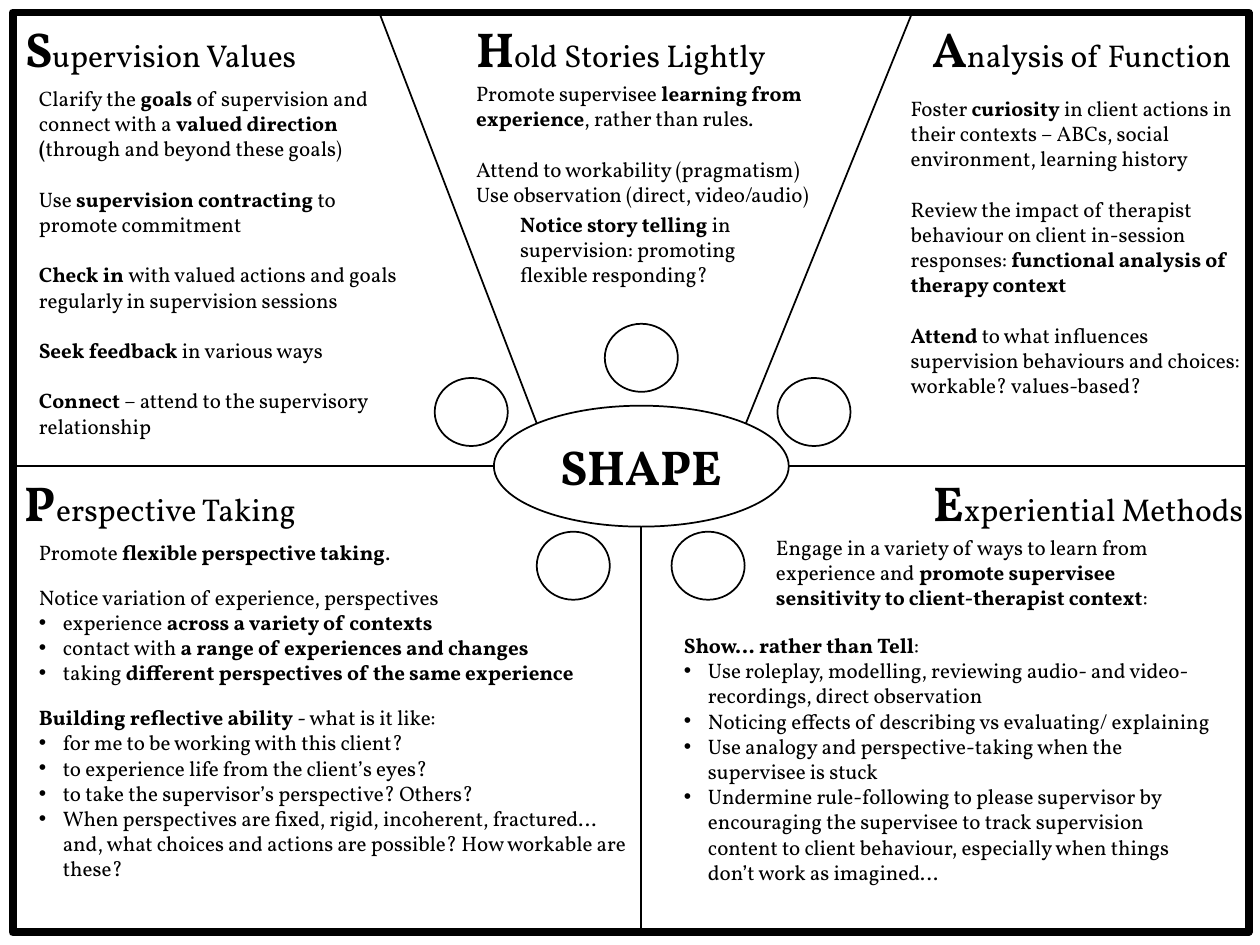
from lxml import etree
from pptx import Presentation
from pptx import util as u
from pptx.dml.color import RGBColor
from pptx.enum import shapes, text
from pptx.oxml import ns

BLACK = RGBColor(0, 0, 0)
WHITE = RGBColor(255, 255, 255)
FONT = "Vollkorn"
BODY, HEADING, INITIAL = 12, 18, 28
BLANK_LINE = 14.4  # height in points of one body line
INDENT = u.Inches(0.19)


class Board:
    """Style and current slide; bold words are marked *like this*."""

    def __init__(self, slide):
        self.slide = slide

    def outline(self, kind, left, top, width, height, line=1):
        shape = self.slide.shapes.add_shape(
            kind, *(u.Inches(value) for value in (left, top, width, height)))
        shape.shadow.inherit = False
        shape.fill.solid()
        shape.fill.fore_color.rgb = WHITE
        shape.line.color.rgb = BLACK
        shape.line.width = u.Pt(line)
        return shape

    def line(self, *ends):
        connector = self.slide.shapes.add_connector(
            shapes.MSO_CONNECTOR.STRAIGHT, *(u.Inches(end) for end in ends))
        connector.line.color.rgb = BLACK
        connector.line.width = u.Pt(1)
        etree.SubElement(connector._element.spPr, ns.qn("a:effectLst"))

    def box(self, left, top, width, height, wrap=True):
        shape = self.slide.shapes.add_textbox(
            *(u.Inches(value) for value in (left, top, width, height)))
        frame = shape.text_frame
        frame.word_wrap = wrap
        frame.auto_size = text.MSO_AUTO_SIZE.SHAPE_TO_FIT_TEXT
        return frame

    def run(self, paragraph, words, size=BODY, bold=False):
        run = paragraph.add_run()
        run.text = words
        run.font.name = FONT
        run.font.size = u.Pt(size)
        run.font.bold = bold
        run.font.color.rgb = BLACK

    def heading(self, left, top, width, words, wrap=False):
        paragraph = self.box(left, top, width, 0.57, wrap).paragraphs[0]
        self.run(paragraph, words[0], INITIAL, True)
        self.run(paragraph, words[1:], HEADING)

    def bullet(self, paragraph):
        properties = paragraph._p.get_or_add_pPr()
        properties.set("marL", str(INDENT))
        properties.set("indent", str(-INDENT))
        etree.SubElement(properties, ns.qn("a:buFont")).set("typeface", "Arial")
        etree.SubElement(properties, ns.qn("a:buChar")).set("char", "•")

    def body(self, place, *blocks, gap=BLANK_LINE):
        """Each block is a list of paragraphs; a leading • makes a bullet."""
        frame = self.box(*place)
        for number, block in enumerate(blocks):
            for row, words in enumerate(block):
                first = number == row == 0
                paragraph = frame.paragraphs[0] if first else frame.add_paragraph()
                if number and row == 0:
                    paragraph.space_before = u.Pt(gap)
                if words.startswith("•"):
                    self.bullet(paragraph)
                for index, part in enumerate(words.lstrip("•").split("*")):
                    if part:
                        self.run(paragraph, part, bold=index % 2 == 1)


def main():
    presentation = Presentation()
    presentation.slide_width = u.Inches(10)
    presentation.slide_height = u.Inches(7.5)
    slide = presentation.slides.add_slide(presentation.slide_layouts[6])
    board = Board(slide)
    oval = shapes.MSO_SHAPE.OVAL

    # Frame, hub and dividing lines
    board.outline(shapes.MSO_SHAPE.RECTANGLE, 0.1, 0.1, 9.81, 7.3, line=4.5)
    hub = board.outline(oval, 3.92, 3.22, 2.34, 0.96).text_frame
    hub.vertical_anchor = text.MSO_ANCHOR.MIDDLE
    hub.paragraphs[0].alignment = text.PP_ALIGN.CENTER
    board.run(hub.paragraphs[0], "SHAPE", INITIAL, True)
    for ends in ((3.92, 3.7, 0.1, 3.7), (9.91, 3.7, 6.26, 3.7),
                 (4.26, 3.36, 3.01, 0.1), (5.92, 3.36, 7.24, 0.1),
                 (5.09, 7.4, 5.09, 4.18)):
        board.line(*ends)

    # Circles around the hub
    for left, top in ((3.45, 3), (4.8, 2.57), (6.17, 3), (4.26, 4.22), (5.33, 4.22)):
        board.outline(oval, left, top, 0.58, 0.54)

    # Headings
    board.heading(0.1, 0.1, 2.91, "Supervision Values", wrap=True)
    board.heading(3.68, 0.1, 2.59, "Hold Stories Lightly")
    board.heading(7.3, 0.1, 2.62, "Analysis of Function")
    board.heading(0.1, 3.7, 2.4, "Perspective Taking")
    board.heading(7.31, 3.7, 2.69, "Experiential Methods")

    # Supervision values
    board.body(
        (0.21, 0.63, 3.14, 2.93),
        ["Clarify the *goals* of supervision and connect with a "
         "*valued direction (*through and beyond these goals)"],
        ["Use *supervision contracting *to promote commitment"],
        ["*Check in *with valued actions and goals regularly in supervision sessions"],
        ["*Seek feedback *in various ways"],
        ["*Connect *– attend to the supervisory relationship"])

    # Hold stories lightly
    board.body(
        (3.68, 0.59, 3.31, 1.11),
        ["Promote supervisee *learning from experience*, rather than rules."],
        ["Attend to workability (pragmatism)",
         "Use observation (direct, video/audio)"])
    board.body(
        (4.03, 1.63, 2.29, 0.71),
        ["*Notice story telling *in supervision: promoting flexible responding?"])

    # Analysis of function
    board.body(
        (7.13, 0.71, 2.96, 3.43),
        ["Foster *curiosity* in client actions in their contexts – ABCs, "
         "social environment, learning history"],
        ["Review the impact of therapist behaviour on client in-session "
         "responses: *functional analysis of therapy context*"],
        ["*Attend* to what influences supervision behaviours and choices: "
         "workable? values-based?"])

    # Perspective taking
    board.body(
        (0.21, 4.23, 4.88, 3.52),
        ["Promote *flexible perspective taking*."],
        ["Notice variation of experience, perspectives",
         "•experience *across a variety of contexts*",
         "•contact with *a range of experiences and changes*",
         "•taking *different perspectives of the same experience*"],
        ["*Building reflective ability *- what is it like:",
         "•for me to be working with this client?",
         "•to experience life from the client’s eyes?",
         "•to take the supervisor’s perspective? Others?",
         "•When perspectives are fixed, rigid, incoherent, fractured… and, "
         "what choices and actions are possible? How workable are these?"],
        gap=11.3)

    # Experiential methods
    board.body(
        (6.06, 4.19, 3.68, 0.71),
        ["Engage in a variety of ways to learn from experience and "
         "*promote supervisee sensitivity to client-therapist context*:"])
    board.body(
        (5.33, 4.97, 4.41, 2.32),
        ["*Show… rather than Tell*:",
         "•Use roleplay, modelling, reviewing audio- and video-recordings, "
         "direct observation",
         "•Noticing effects of describing vs evaluating/ explaining",
         "•Use analogy and perspective-taking when the supervisee is stuck",
         "•Undermine rule-following to please supervisor by encouraging the "
         "supervisee to track supervision content to client behaviour, "
         "especially when things don’t work as imagined…"])

    presentation.save("out.pptx")


if __name__ == "__main__":
    main()
